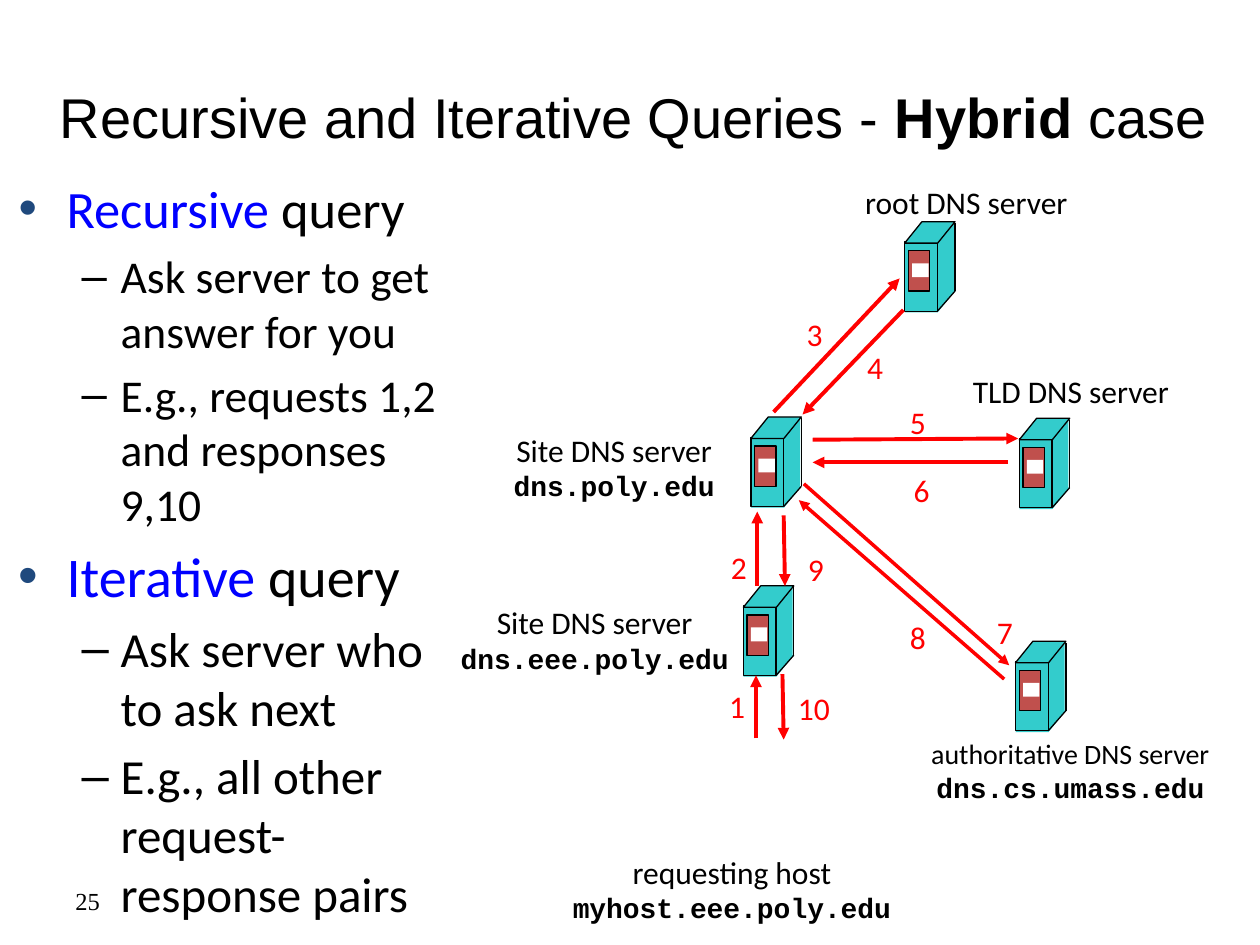
from lxml.etree import SubElement
from pptx import Presentation
from pptx.dml.color import RGBColor
from pptx.enum.shapes import MSO_CONNECTOR, MSO_SHAPE
from pptx.enum.text import MSO_ANCHOR, PP_ALIGN
from pptx.oxml.ns import qn
from pptx.util import Inches, Pt

BLACK = RGBColor(0x00, 0x00, 0x00)
WHITE = RGBColor(0xFF, 0xFF, 0xFF)
RED = RGBColor(0xFF, 0x00, 0x00)
BLUE = RGBColor(0x00, 0x00, 0xFF)
NAVY = RGBColor(0x1F, 0x49, 0x7D)
TEAL = RGBColor(0x33, 0xCC, 0xCC)
BRICK = RGBColor(0xC0, 0x50, 0x4D)

TITLE = [("Recursive and Iterative Queries - ", False), ("Hybrid", True), (" case", False)]

BULLETS = [
    (0, 30, [("Recursive", BLUE), (" query", BLACK)]),
    (1, 26, [("Ask server to get answer for you", BLACK)]),
    (1, 26, [("E.g., requests 1,2 and responses 9,10", BLACK)]),
    (0, 32, [("Iterative", BLUE), (" query", BLACK)]),
    (1, 28, [("Ask server who to ask next", BLACK)]),
    (1, 28, [("E.g., all other request-response pairs", BLACK)]),
]
BULLET_STYLES = [("•", NAVY, 0.38, 0.38), ("–", BLACK, 0.81, 0.31)]

SERVERS = [(7.18, 1.76), (8.09, 3.32), (8.06, 5.09), (5.96, 3.31), (5.9, 4.65)]

SERVER_PARTS = [
    (MSO_SHAPE.PARALLELOGRAM, 0, 0.55, 0.4, 0.17, TEAL, False),
    (MSO_SHAPE.RECTANGLE, 0.2, 0.01, 0.19, 0.55, TEAL, False),
    (MSO_SHAPE.RECTANGLE, 0, 0.16, 0.26, 0.55, TEAL, True),
    (MSO_SHAPE.PARALLELOGRAM, 0, 0, 0.4, 0.17, TEAL, True),
    (MSO_SHAPE.RECTANGLE, 0.03, 0.23, 0.17, 0.32, BRICK, True),
    (MSO_SHAPE.RECTANGLE, 0.06, 0.33, 0.13, 0.11, WHITE, False),
]
SERVER_EDGES = [(0.4, 0.01, 0.4, 0.55), (0.4, 0.55, 0.26, 0.71)]

SERVER_LABELS = [
    (4.43, 6.72, 2.76, 0.67, 18, "requesting host", "myhost.eee.poly.edu"),
    (6.57, 1.4, 2.2, 0.4, 18, "root DNS server", None),
    (7.27, 5.8, 2.45, 0.64, 16, "authoritative DNS server", "dns.cs.umass.edu"),
    (7.4, 2.9, 2.2, 0.4, 18, "TLD DNS server", None),
    (3.94, 3.37, 1.87, 0.67, 18, "Site DNS server", "dns.poly.edu"),
    (3.54, 4.74, 2.36, 0.67, 18, "Site DNS server", "dns.eee.poly.edu"),
]

MESSAGES = [
    ("1", 5.68, 5.4, 0.34, (6, 5.86, 6, 5.36), 2.25),
    ("2", 5.7, 4.3, 0.33, (6.01, 4.65, 6.01, 4.06), 2.25),
    ("3", 6.3, 2.45, 0.33, (6.14, 3.27, 7.14, 2.21), 2.25),
    ("4", 6.78, 2.71, 0.33, (7.17, 2.46, 6.37, 3.29), 2.25),
    ("5", 7.12, 3.15, 0.33, (6.45, 3.49, 8.08, 3.48), 2.25),
    ("6", 7.15, 3.69, 0.33, (8, 3.67, 6.45, 3.67), 2.25),
    ("7", 7.81, 4.82, 0.33, (6.38, 3.84, 8.01, 5.28), 2),
    ("8", 7.12, 4.86, 0.33, (7.97, 5.39, 6.34, 3.97), 2),
    ("9", 6.31, 4.32, 0.33, (6.22, 4.09, 6.23, 4.65), 2.25),
    ("10", 6.23, 5.42, 0.46, (6.21, 5.35, 6.22, 5.87), 2.25),
]


def add_frame(slide, left, top, width, height, wrap=False, anchor=MSO_ANCHOR.TOP):
    box = slide.shapes.add_textbox(Inches(left), Inches(top), Inches(width), Inches(height))
    frame = box.text_frame
    frame.word_wrap = wrap
    frame.vertical_anchor = anchor
    return frame


def add_run(paragraph, text, font_name, size, color=BLACK, bold=False):
    run = paragraph.add_run()
    run.text = text
    run.font.name = font_name
    run.font.size = Pt(size)
    run.font.bold = bold
    run.font.color.rgb = color


def add_line(slide, ends, color, width, arrow=False):
    line = slide.shapes.add_connector(MSO_CONNECTOR.STRAIGHT, *map(Inches, ends))
    line.line.color.rgb = color
    line.line.width = Pt(width)
    if arrow:
        SubElement(line.line._get_or_add_ln(), qn("a:tailEnd"), type="triangle")
    SubElement(line._element.spPr, qn("a:effectLst"))


def add_server(slide, left, top):
    for preset, dx, dy, width, height, fill, outlined in SERVER_PARTS:
        part = slide.shapes.add_shape(
            preset, Inches(left + dx), Inches(top + dy), Inches(width), Inches(height))
        part.shadow.inherit = False
        part.fill.solid()
        part.fill.fore_color.rgb = fill
        if preset == MSO_SHAPE.PARALLELOGRAM:
            part.adjustments[0] = 0.81
        if outlined:
            part.line.color.rgb = BLACK
            part.line.width = Pt(0.75)
        else:
            part.line.fill.background()
    for x1, y1, x2, y2 in SERVER_EDGES:
        add_line(slide, (left + x1, top + y1, left + x2, top + y2), BLACK, 0.75)


def add_bullets(slide):
    frame = add_frame(slide, 0.05, 1.35, 3.64, 6, wrap=True)
    for index, (level, size, pieces) in enumerate(BULLETS):
        paragraph = frame.paragraphs[0] if index == 0 else frame.add_paragraph()
        paragraph.level = level
        paragraph.space_before = Pt(size * 0.2)
        mark, color, margin, hanging = BULLET_STYLES[level]
        properties = paragraph._p.get_or_add_pPr()
        properties.set("marL", str(Inches(margin)))
        properties.set("indent", str(-Inches(hanging)))
        bullet_color = SubElement(properties, qn("a:buClr"))
        SubElement(bullet_color, qn("a:srgbClr"), val=str(color))
        SubElement(properties, qn("a:buFont"), typeface="Arial")
        SubElement(properties, qn("a:buChar"), char=mark)
        for text, text_color in pieces:
            add_run(paragraph, text, "Calibri", size, text_color)


def main():
    deck = Presentation()
    deck.slide_width, deck.slide_height = Inches(10), Inches(7.5)
    slide = deck.slides.add_slide(deck.slide_layouts[6])

    number = add_frame(slide, 0.5, 6.95, 2.33, 0.4, True, MSO_ANCHOR.MIDDLE)
    add_run(number.paragraphs[0], "25", "Times New Roman", 14)

    title = add_frame(slide, 0.05, 0.3, 9.95, 1.25, True, MSO_ANCHOR.MIDDLE).paragraphs[0]
    title.alignment = PP_ALIGN.CENTER
    for text, bold in TITLE:
        add_run(title, text, "Arial", 32, bold=bold)

    add_bullets(slide)

    for left, top in SERVERS:
        add_server(slide, left, top)

    for left, top, width, height, size, role, host in SERVER_LABELS:
        frame = add_frame(slide, left, top, width, height)
        add_run(frame.paragraphs[0], role, "Calibri", size)
        if host:
            add_run(frame.add_paragraph(), host, "Courier New", 16, bold=True)
        for paragraph in frame.paragraphs:
            paragraph.alignment = PP_ALIGN.CENTER

    for step, left, top, width, ends, weight in MESSAGES:
        add_line(slide, ends, RED, weight, arrow=True)
        label = add_frame(slide, left, top, width, 0.4).paragraphs[0]
        label.alignment = PP_ALIGN.CENTER
        add_run(label, step, "Calibri", 18, RED)

    deck.save("out.pptx")


if __name__ == "__main__":
    main()
